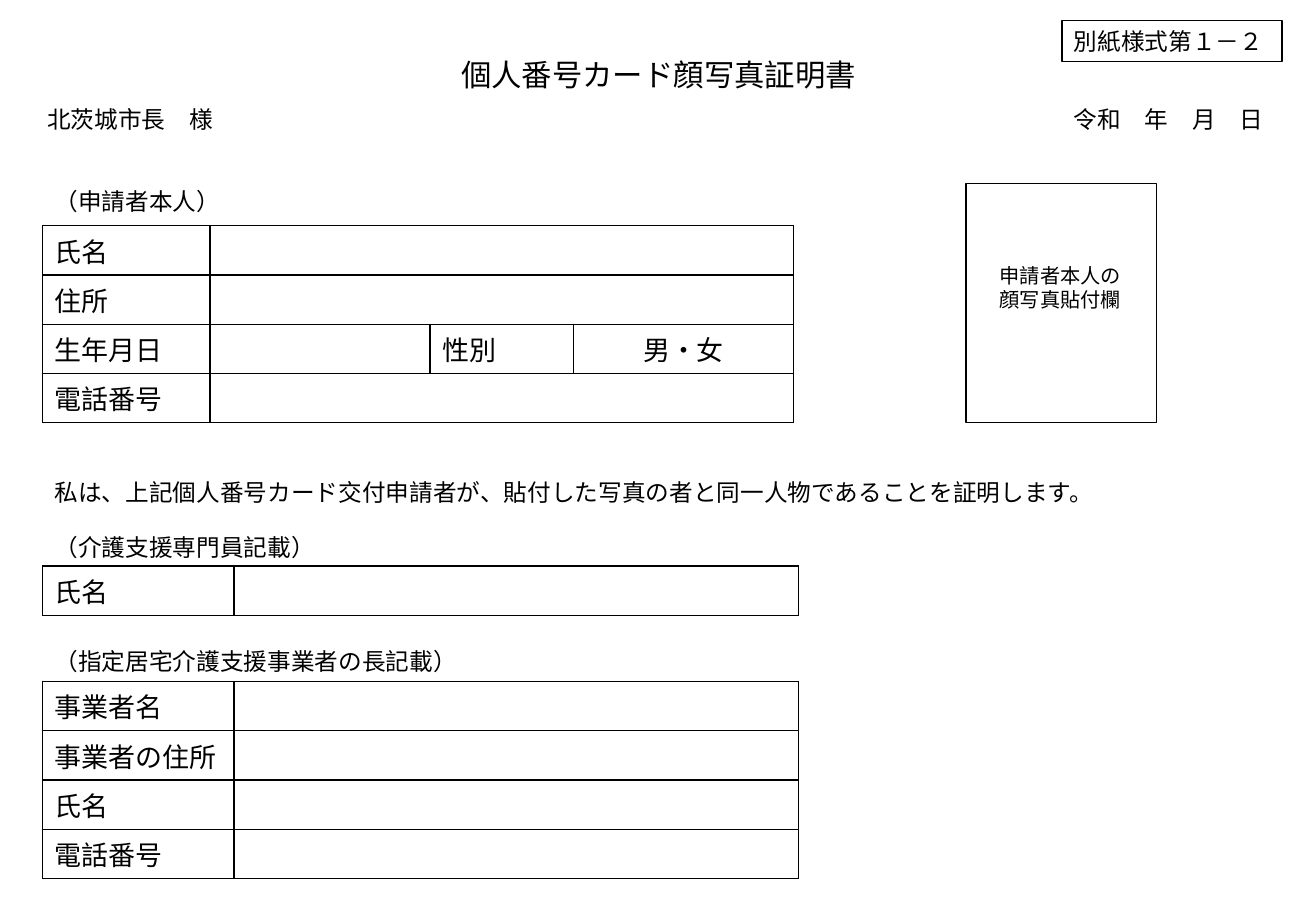
"""Build the one-page face photo certificate form for an individual number card."""
from lxml.etree import SubElement
from pptx import Presentation
from pptx.dml.color import RGBColor
from pptx.enum.shapes import MSO_SHAPE as Shape
from pptx.enum.text import MSO_ANCHOR as Anchor, PP_ALIGN as Align
from pptx.oxml.ns import qn
from pptx.util import Cm, Pt

FONT = "Noto Sans CJK JP"
BLACK, WHITE = "000000", "FFFFFF"
LEFT, LINE_HEIGHT, ROW_HEIGHT = 0.89, 0.86, 1.03

TITLE = ("個人番号カード顔写真証明書", (9.27, 1.04, 8.99, 1.02))
FORM_NUMBER = ("別紙様式第１－２", (22.2, 0.43, 4.6, LINE_HEIGHT))
PHOTO_FRAME = (20.19, 3.84, 3.99, 5.0)
PHOTO_NOTE = ("申請者本人の\n顔写真貼付欄", (20.65, 5.38, 3.1, 1.27))
LINES = [
    ("北茨城市長　様", 0.74, 2.06, 9.0),
    ("令和　年　月　日", 22.2, 2.06, 4.85),
    ("（申請者本人）", LEFT, 3.78, 15.7),
    ("私は、上記個人番号カード交付申請者が、貼付した写真の者と同一人物であることを証明します。",
     LEFT, 9.86, 23.0),
    ("（介護支援専門員記載）", LEFT, 11.02, 15.7),
    ("（指定居宅介護支援事業者の長記載）", LEFT, 13.39, 15.7),
]
APPLICANT_COLUMNS = [3.5, 4.6, 3.0, 4.6]
CERTIFIER_COLUMNS = [4.0, 11.8]
TABLES = [
    (4.72, APPLICANT_COLUMNS,
     [["氏名"], ["住所"], ["生年月日", "", "性別", "男・女"], ["電話番号"]]),
    (11.84, CERTIFIER_COLUMNS, [["氏名"]]),
    (14.25, CERTIFIER_COLUMNS, [["事業者名"], ["事業者の住所"], ["氏名"], ["電話番号"]]),
]


def color(value):
    return RGBColor.from_string(value)


def write(frame, text, size=14, align=Align.LEFT):
    frame.word_wrap = True
    for index, line in enumerate(text.split("\n")):
        paragraph = frame.add_paragraph() if index else frame.paragraphs[0]
        paragraph.alignment = align
        run = paragraph.add_run()
        run.text = line
        run.font.size = Pt(size)
        run.font.color.rgb = color(BLACK)
        run.font.name = FONT
        SubElement(run.font._element, qn("a:ea"), typeface=FONT)


def add_text(slide, text, box, **style):
    frame = slide.shapes.add_textbox(*map(Cm, box)).text_frame
    frame.vertical_anchor = Anchor.MIDDLE
    write(frame, text, **style)


def add_frame(slide, box, width):
    shape = slide.shapes.add_shape(Shape.RECTANGLE, *map(Cm, box))
    shape.shadow.inherit = False
    shape.fill.background()
    shape.line.color.rgb = color(BLACK)
    shape.line.width = Pt(width)
    return shape


def format_cell(cell):
    properties = cell._tc.get_or_add_tcPr()
    for side in ("lnL", "lnR", "lnT", "lnB"):
        line = SubElement(properties, qn(f"a:{side}"), w=str(Pt(1)))
        fill = SubElement(line, qn("a:solidFill"))
        SubElement(fill, qn("a:srgbClr"), val=BLACK)
    cell.fill.solid()
    cell.fill.fore_color.rgb = color(WHITE)
    cell.vertical_anchor = Anchor.MIDDLE
    cell.margin_top = cell.margin_bottom = Cm(0.1)


def add_form_table(slide, top, columns, rows):
    box = (LEFT, top, sum(columns), ROW_HEIGHT * len(rows))
    table = slide.shapes.add_table(len(rows), len(columns), *map(Cm, box)).table
    table.first_row = table.horz_banding = False
    for column, width in zip(table.columns, columns):
        column.width = Cm(width)
    for cell in table.iter_cells():
        format_cell(cell)
    last = len(columns) - 1
    for index, texts in enumerate(rows):
        table.rows[index].height = Cm(ROW_HEIGHT)
        if len(texts) == 1 and last > 1:
            table.cell(index, 1).merge(table.cell(index, last))
        for position, text in enumerate(texts):
            if text:
                align = Align.CENTER if position == 3 else Align.LEFT
                write(table.cell(index, position).text_frame, text, size=16, align=align)


def main():
    presentation = Presentation()
    presentation.slide_width, presentation.slide_height = Cm(27.51), Cm(19.05)
    slide = presentation.slides.add_slide(presentation.slide_layouts[5])

    text, box = TITLE
    title = slide.shapes.title
    title.left, title.top, title.width, title.height = map(Cm, box)
    title.text_frame.vertical_anchor = Anchor.MIDDLE
    write(title.text_frame, text, size=18, align=Align.CENTER)

    text, box = FORM_NUMBER
    write(add_frame(slide, box, 0.75).text_frame, text)
    add_frame(slide, PHOTO_FRAME, 1)
    text, box = PHOTO_NOTE
    add_text(slide, text, box, size=12)

    for text, left, top, width in LINES:
        add_text(slide, text, (left, top, width, LINE_HEIGHT))
    for top, columns, rows in TABLES:
        add_form_table(slide, top, columns, rows)
    presentation.save("out.pptx")


if __name__ == "__main__":
    main()
